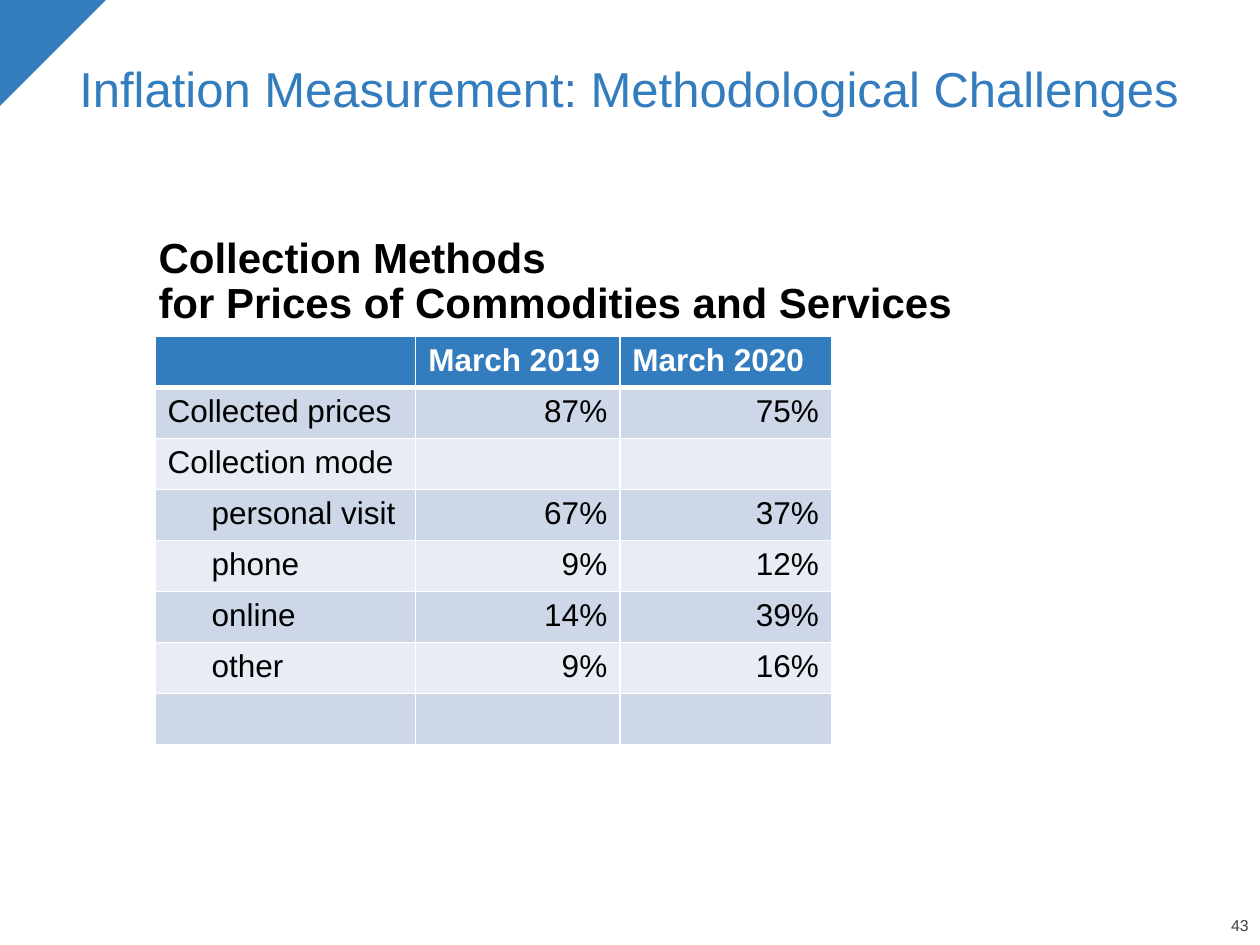
from lxml.etree import SubElement
from pptx import Presentation
from pptx.dml.color import RGBColor
from pptx.enum.shapes import MSO_SHAPE
from pptx.enum.text import MSO_ANCHOR, PP_ALIGN
from pptx.oxml.ns import qn
from pptx.util import Inches, Pt

COLORS = {
    "blue": "337DBE",
    "band_dark": "CED7E8",
    "band_light": "E8ECF4",
    "black": "000000",
    "white": "FFFFFF",
    "grey": "404040",
}
HEADER = ["", "March 2019", "March 2020"]
PRICE_ROWS = [
    ["Collected prices", "87%", "75%"],
    ["Collection mode", "", ""],
    ["personal visit", "67%", "37%"],
    ["phone", "9%", "12%"],
    ["online", "14%", "39%"],
    ["other", "9%", "16%"],
    ["", "", ""],
]
MODES = {"personal visit", "phone", "online", "other"}


class SlideBuilder:
    """Hold the style and the current slide, and add each kind of element."""

    font = "Arial"

    def __init__(self, slide):
        self.slide = slide

    def color(self, name):
        return RGBColor.from_string(COLORS[name])

    def place(self, shape, box):
        shape.left, shape.top, shape.width, shape.height = map(Inches, box)

    def add_lines(self, paragraph, text, size, color, bold=False, align=PP_ALIGN.LEFT):
        paragraph.alignment = align
        for index, line in enumerate(text.split("\n")):
            if index:
                paragraph.add_line_break()
            run = paragraph.add_run()
            run.text = line
            run.font.name = self.font
            run.font.size = Pt(size)
            run.font.bold = bold
            run.font.color.rgb = self.color(color)

    def frame(self, frame, anchor, text, size, color, **style):
        frame.word_wrap = True
        frame.vertical_anchor = anchor
        paragraph = frame.paragraphs[0]
        paragraph.line_spacing = 0.9
        self.add_lines(paragraph, text, size, color, **style)

    def title(self, box, text):
        title = self.slide.shapes.title
        self.place(title, box)
        self.frame(title.text_frame, MSO_ANCHOR.BOTTOM, text, 28, "blue")

    def text(self, box, anchor, text, size, color, inset=True, **style):
        frame = self.slide.shapes.add_textbox(*map(Inches, box)).text_frame
        if not inset:
            frame.margin_left = frame.margin_right = 0
            frame.margin_top = frame.margin_bottom = 0
        self.frame(frame, anchor, text, size, color, **style)

    def corner(self, size):
        corner = self.slide.shapes.add_shape(
            MSO_SHAPE.RIGHT_TRIANGLE, 0, 0, Inches(size), Inches(size))
        corner.rotation = 90
        corner.shadow.inherit = False
        corner.fill.solid()
        corner.fill.fore_color.rgb = self.color("blue")
        corner.line.fill.background()

    def borders(self, cell, top, bottom):
        properties = cell._tc.get_or_add_tcPr()
        for side, width in (("L", 1), ("R", 1), ("T", top), ("B", bottom)):
            line = SubElement(properties, qn(f"a:ln{side}"), w=str(Pt(width)))
            fill = SubElement(line, qn("a:solidFill"))
            SubElement(fill, qn("a:srgbClr"), val=COLORS["white"])

    def table(self, box, widths, rows):
        table = self.slide.shapes.add_table(
            len(rows), len(widths), *map(Inches, box)).table
        for column, width in zip(table.columns, widths):
            column.width = Inches(width)
        for row_index, row in enumerate(rows):
            header = row_index == 0
            band = "band_dark" if row_index % 2 else "band_light"
            for column_index, value in enumerate(row):
                cell = table.cell(row_index, column_index)
                self.borders(cell, 3 if row_index == 1 else 1, 3 if header else 1)
                cell.fill.solid()
                cell.fill.fore_color.rgb = self.color("blue" if header else band)
                if value in MODES:
                    cell.margin_left = Inches(0.45)
                numeric = column_index and not header
                paragraph = cell.text_frame.paragraphs[0]
                paragraph.font.size = Pt(18)
                if value:
                    self.add_lines(paragraph, value, 18,
                                   "white" if header else "black", bold=header,
                                   align=PP_ALIGN.RIGHT if numeric else PP_ALIGN.LEFT)


def main():
    presentation = Presentation()
    presentation.slide_width = Inches(10)
    presentation.slide_height = Inches(7.5)
    builder = SlideBuilder(
        presentation.slides.add_slide(presentation.slide_layouts[5]))

    builder.corner(0.84)
    builder.text((9.43, 7.29, 0.48, 0.13), MSO_ANCHOR.BOTTOM, "43", 9, "grey",
                 inset=False, align=PP_ALIGN.RIGHT)
    builder.title((0.53, 0.25, 9.11, 0.74),
                  "Inflation Measurement: Methodological Challenges")
    builder.text((1.16, 1.73, 8.58, 1.02), MSO_ANCHOR.MIDDLE,
                 "Collection Methods\nfor Prices of Commodities and Services",
                 24, "black", bold=True)
    builder.table((1.23, 2.67, 5.37, 3.24), (2.07, 1.62, 1.68),
                  [HEADER] + PRICE_ROWS)
    presentation.save("out.pptx")


if __name__ == "__main__":
    main()
